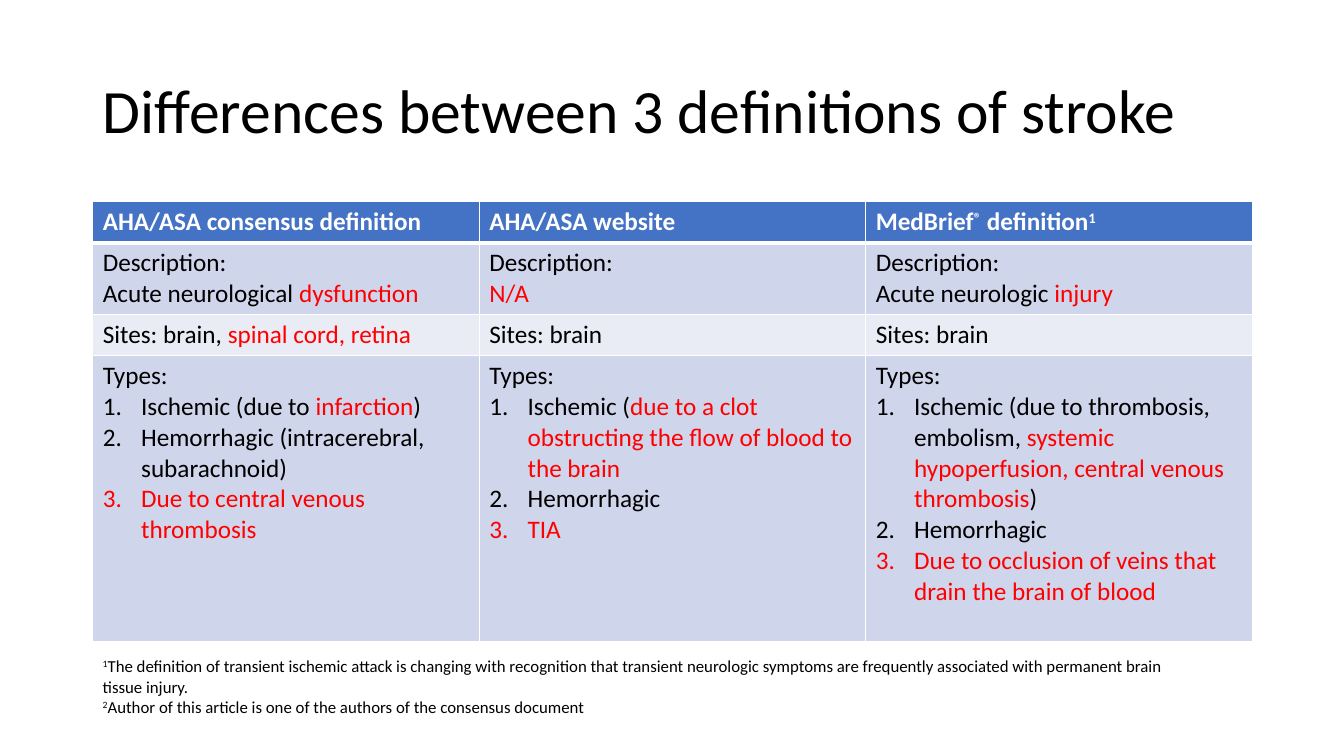
import pptx
import pptx.dml.color
import pptx.enum.text
import pptx.oxml
import pptx.oxml.ns
import pptx.util

Inches = pptx.util.Inches
COLORS = {"text": "000000", "red": "FF0000", "white": "FFFFFF",
          "header": "4472C4", "odd": "CFD5EA", "even": "E9EBF5"}
SUP = "sup"
RED = "red"
TYPES = ["Types:"]
DESCRIPTION = ["Description:"]
HEMORRHAGIC = ["Hemorrhagic"]
BRAIN = [["Sites: brain"]]

ROWS = [
    [[["AHA/ASA consensus definition"]],
     [["AHA/ASA website"]],
     [["MedBrief", ("®", SUP), " definition", ("1", SUP)]]],
    [[DESCRIPTION, ["Acute neurological ", ("dysfunction", RED)]],
     [DESCRIPTION, [("N/A", RED)]],
     [DESCRIPTION, ["Acute neurologic ", ("injury", RED)]]],
    [[["Sites: brain, ", ("spinal cord, retina", RED)]], BRAIN, BRAIN],
    [[TYPES,
      ["Ischemic (due to ", ("infarction", RED), ")"],
      ["Hemorrhagic (intracerebral, subarachnoid)"],
      [("Due to central venous thrombosis", RED)]],
     [TYPES,
      ["Ischemic (", ("due to a clot obstructing the flow of blood to the brain", RED)],
      HEMORRHAGIC,
      [("TIA", RED)]],
     [TYPES,
      ["Ischemic (due to thrombosis, embolism, ",
       ("systemic hypoperfusion, central venous thrombosis", RED), ")"],
      HEMORRHAGIC,
      [("Due to occlusion of veins that drain the brain of blood", RED)]]],
]
ROW_HEIGHTS = [0.41, 0.71, 0.41, 2.83]
ROW_FILLS = ["header", "odd", "even", "odd"]
FOOTNOTES = [
    [("1", SUP), "The definition of transient ischemic attack is changing with recognition that "
     "transient neurologic symptoms are frequently associated with permanent brain tissue injury."],
    [("2", SUP), "Author of this article is one of the authors of the consensus document"],
]


class Deck:
    """Slide builder holding the shared style and the current slide."""

    def __init__(self, prs):
        self.font = "Calibri"
        self.s = prs.slides.add_slide(prs.slide_layouts[5])

    def rgb(self, name):
        return pptx.dml.color.RGBColor.from_string(COLORS[name])

    def place(self, sp, left, top, width, height):
        box = {"left": left, "top": top, "width": width, "height": height}
        for name, value in box.items():
            setattr(sp, name, Inches(value))

    def fill_text(self, tf, paragraphs, size, color="text", bold=False):
        for i, runs in enumerate(paragraphs):
            p = tf.paragraphs[0] if i == 0 else tf.add_paragraph()
            for run in runs:
                text, kind = (run, None) if isinstance(run, str) else run
                r = p.add_run()
                r.text = text
                style = {"name": self.font, "size": pptx.util.Pt(size), "bold": bold}
                for name, value in style.items():
                    setattr(r.font, name, value)
                r.font.color.rgb = self.rgb(RED if kind == RED else color)
                if kind == SUP:
                    r._r.get_or_add_rPr().set("baseline", "30000")

    def number(self, p):
        pPr = p._p.get_or_add_pPr()
        pPr.set("marL", str(Inches(0.38)))
        pPr.set("indent", str(-Inches(0.38)))
        pPr.append(pptx.oxml.parse_xml(
            f'<a:buFont {pptx.oxml.ns.nsdecls("a")} typeface="+mj-lt"/>'))
        pPr.append(pptx.oxml.parse_xml(
            f'<a:buAutoNum {pptx.oxml.ns.nsdecls("a")} type="arabicPeriod"/>'))

    def title(self, text):
        sp = self.s.shapes.title
        self.place(sp, 0.92, 0.4, 11.5, 1.45)
        tf = sp.text_frame
        style = {"word_wrap": True, "auto_size": pptx.enum.text.MSO_AUTO_SIZE.NONE,
                 "vertical_anchor": pptx.enum.text.MSO_ANCHOR.MIDDLE}
        for name, value in style.items():
            setattr(tf, name, value)
        self.fill_text(tf, [[text]], 44)
        p = tf.paragraphs[0]
        p.alignment = pptx.enum.text.PP_ALIGN.LEFT
        p.line_spacing = 0.9

    def borders(self, cell, widths):
        tcPr = cell._tc.get_or_add_tcPr()
        for side, width in widths.items():
            tcPr.append(pptx.oxml.parse_xml(
                f'<a:ln{side} {pptx.oxml.ns.nsdecls("a")} w="{pptx.util.Pt(width)}">'
                f'<a:solidFill><a:srgbClr val="{COLORS["white"]}"/></a:solidFill></a:ln{side}>'))

    def table(self, rows, heights, fills):
        tbl = self.s.shapes.add_table(len(rows), len(rows[0]), Inches(0.92), Inches(2),
                                      Inches(11.5), Inches(sum(heights))).table
        for i, row in enumerate(rows):
            tbl.rows[i].height = Inches(heights[i])
            for j, paragraphs in enumerate(row):
                cell = tbl.cell(i, j)
                self.borders(cell, {"L": 1, "R": 1, "T": 3 if i == 1 else 1,
                                    "B": 3 if i == 0 else 1})
                cell.fill.solid()
                cell.fill.fore_color.rgb = self.rgb(fills[i])
                self.fill_text(cell.text_frame, paragraphs, 18,
                               "white" if i == 0 else "text", i == 0)
                if paragraphs[0] == TYPES:
                    for p in cell.text_frame.paragraphs[1:]:
                        self.number(p)

    def textbox(self, paragraphs, left, top, width, height):
        sp = self.s.shapes.add_textbox(0, 0, 0, 0)
        self.place(sp, left, top, width, height)
        tf = sp.text_frame
        tf.word_wrap = True
        tf.auto_size = pptx.enum.text.MSO_AUTO_SIZE.SHAPE_TO_FIT_TEXT
        self.fill_text(tf, paragraphs, 12)


def main():
    prs = pptx.Presentation()
    prs.slide_width, prs.slide_height = Inches(13.33), Inches(7.5)
    deck = Deck(prs)
    deck.title("Differences between 3 definitions of stroke")
    deck.table(ROWS, ROW_HEIGHTS, ROW_FILLS)
    deck.textbox(FOOTNOTES, 0.92, 6.46, 11.08, 0.71)
    prs.save("out.pptx")


if __name__ == "__main__":
    main()
